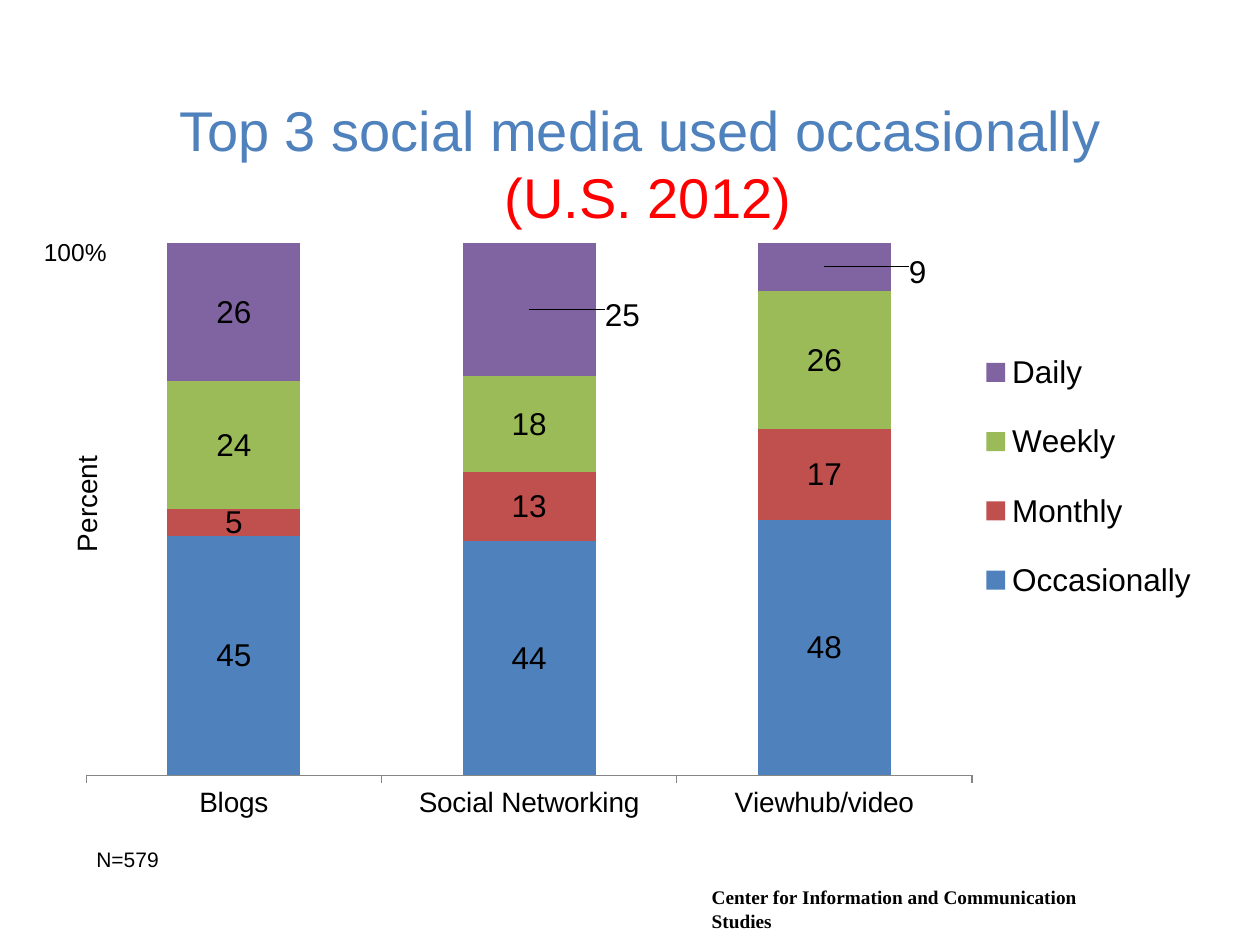
from dataclasses import dataclass

from lxml import etree
from pptx import Presentation
from pptx.chart.data import CategoryChartData
from pptx.dml.color import RGBColor
from pptx.enum.chart import XL_CHART_TYPE, XL_LABEL_POSITION, XL_LEGEND_POSITION, XL_TICK_LABEL_POSITION, XL_TICK_MARK
from pptx.enum.text import MSO_ANCHOR, PP_ALIGN
from pptx.oxml.ns import qn
from pptx.util import Pt

COLORS = {
    "text": "000000",
    "title": "4F81BD",
    "year": "FF0000",
    "axis": "868686",
    "Occasionally": "4F81BD",
    "Monthly": "C0504D",
    "Weekly": "9BBB59",
    "Daily": "8064A2",
}
CATEGORIES = ["Blogs", "Social Networking", "Viewhub/video"]
USAGE = {
    "Occasionally": [45, 44, 48],
    "Monthly": [5, 13, 17],
    "Weekly": [24, 18, 26],
    "Daily": [26, 25, 9],
}


@dataclass
class Label:
    text: str
    left: float
    top: float
    width: float
    height: float
    size: float
    run_colors: tuple = ("text",)
    font: str = "Arial"
    bold: bool = False
    align: PP_ALIGN = PP_ALIGN.LEFT
    anchor: MSO_ANCHOR = MSO_ANCHOR.TOP
    vertical: bool = False


LABELS = [
    Label("Center for Information and Communication Studies", 399.6, 502.6, 254, 36, 11,
          font="Times New Roman", bold=True),
    Label("Top 3 social media used occasionally\v (U.S. 2012)", 42, 48, 648, 90, 32,
          ("title", "year"), align=PP_ALIGN.CENTER, anchor=MSO_ANCHOR.MIDDLE),
    Label("N=579", 48, 480, 120, 21.6, 12),
    Label("Percent", 36, 198, 34, 180, 16, align=PP_ALIGN.CENTER, vertical=True),
    Label("100%", 18, 132, 66, 24.5, 14),
]


def style_font(font, size: float, color: str, name: str = "Arial", bold: bool = False) -> None:
    font.size, font.name, font.bold = Pt(size), name, bold
    font.color.rgb = RGBColor.from_string(COLORS[color])


def add_label(slide, label: Label) -> None:
    box = slide.shapes.add_textbox(Pt(label.left), Pt(label.top), Pt(label.width), Pt(label.height))
    frame = box.text_frame
    frame.word_wrap = True
    frame.vertical_anchor = label.anchor
    if label.vertical:
        frame._txBody.find(qn("a:bodyPr")).set("vert", "vert270")
    paragraph = frame.paragraphs[0]
    paragraph.text = label.text
    paragraph.alignment = label.align
    for run, color in zip(paragraph.runs, label.run_colors):
        style_font(run.font, label.size, color, label.font, label.bold)


def set_layout(parent, index: int, **values) -> None:
    """Give a chart part a manual layout, as fractions of the chart."""
    for old in parent.findall(qn("c:layout")):
        parent.remove(old)
    layout = etree.Element(qn("c:layout"))
    manual = etree.SubElement(layout, qn("c:manualLayout"))
    for tag, value in values.items():
        etree.SubElement(manual, qn(f"c:{tag}")).set("val", str(value))
    parent.insert(index, layout)


def add_usage_chart(slide) -> None:
    data = CategoryChartData()
    data.categories = CATEGORIES
    for name, values in USAGE.items():
        data.add_series(name, values)
    chart = slide.shapes.add_chart(XL_CHART_TYPE.COLUMN_STACKED_100, Pt(36), Pt(132),
                                   Pt(666), Pt(342), data).chart
    chart.has_title = False
    style_font(chart.font, 18, "text")

    # Columns and their values
    plot = chart.plots[0]
    plot.gap_width, plot.overlap = 122, 100
    plot.vary_by_categories = False
    for series in plot.series:
        series.format.fill.solid()
        series.format.fill.fore_color.rgb = RGBColor.from_string(COLORS[series.name])
        labels = series.data_labels
        labels.show_value = True
        labels.position = XL_LABEL_POSITION.CENTER
        style_font(labels.font, 18, "text")

    # The last two daily values stand beside their columns
    daily = plot.series[-1]
    for point in (1, 2):
        beside = daily.points[point].data_label
        style_font(beside.font, 18, "text")
        beside.position = XL_LABEL_POSITION.CENTER
    for element in daily._element.iter(qn("c:dLbl")):
        set_layout(element, 1, x=0.08, y=0.01)

    # Axes
    percent_axis = chart.value_axis
    percent_axis.visible = False
    percent_axis.has_major_gridlines = False
    percent_axis.minimum_scale, percent_axis.maximum_scale = 0, 1
    media_axis = chart.category_axis
    media_axis.major_tick_mark = XL_TICK_MARK.OUTSIDE
    media_axis.tick_label_position = XL_TICK_LABEL_POSITION.NEXT_TO_AXIS
    media_axis.format.line.color.rgb = RGBColor.from_string(COLORS["axis"])
    style_font(media_axis.tick_labels.font, 16, "text")

    # Legend and plot area
    chart.has_legend = True
    legend = chart.legend
    legend.position = XL_LEGEND_POSITION.RIGHT
    legend.include_in_layout = False
    style_font(legend.font, 18, "text")
    set_layout(legend._element, 1, xMode="edge", yMode="edge", x=0.78, y=0.15, w=0.2, h=0.52)
    plot_area = chart._chartSpace.find(f".//{qn('c:plotArea')}")
    set_layout(plot_area, 0, layoutTarget="inner", xMode="edge", yMode="edge",
               x=0.02, y=0.02, w=0.76, h=0.89)


def main() -> None:
    presentation = Presentation()
    presentation.slide_width, presentation.slide_height = Pt(720), Pt(540)
    slide = presentation.slides.add_slide(presentation.slide_layouts[6])
    add_usage_chart(slide)
    for label in LABELS:
        add_label(slide, label)
    presentation.save("out.pptx")


if __name__ == "__main__":
    main()
